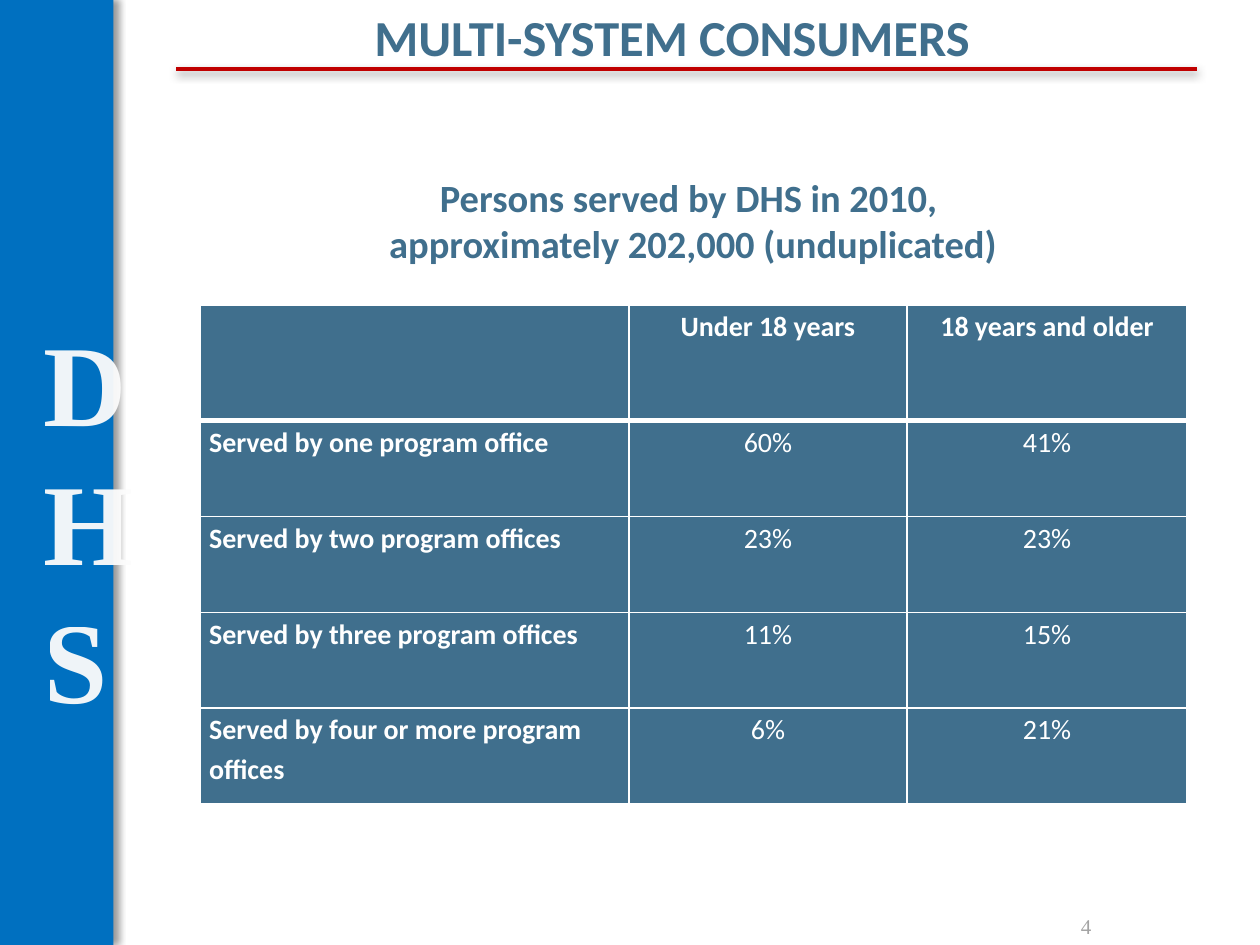
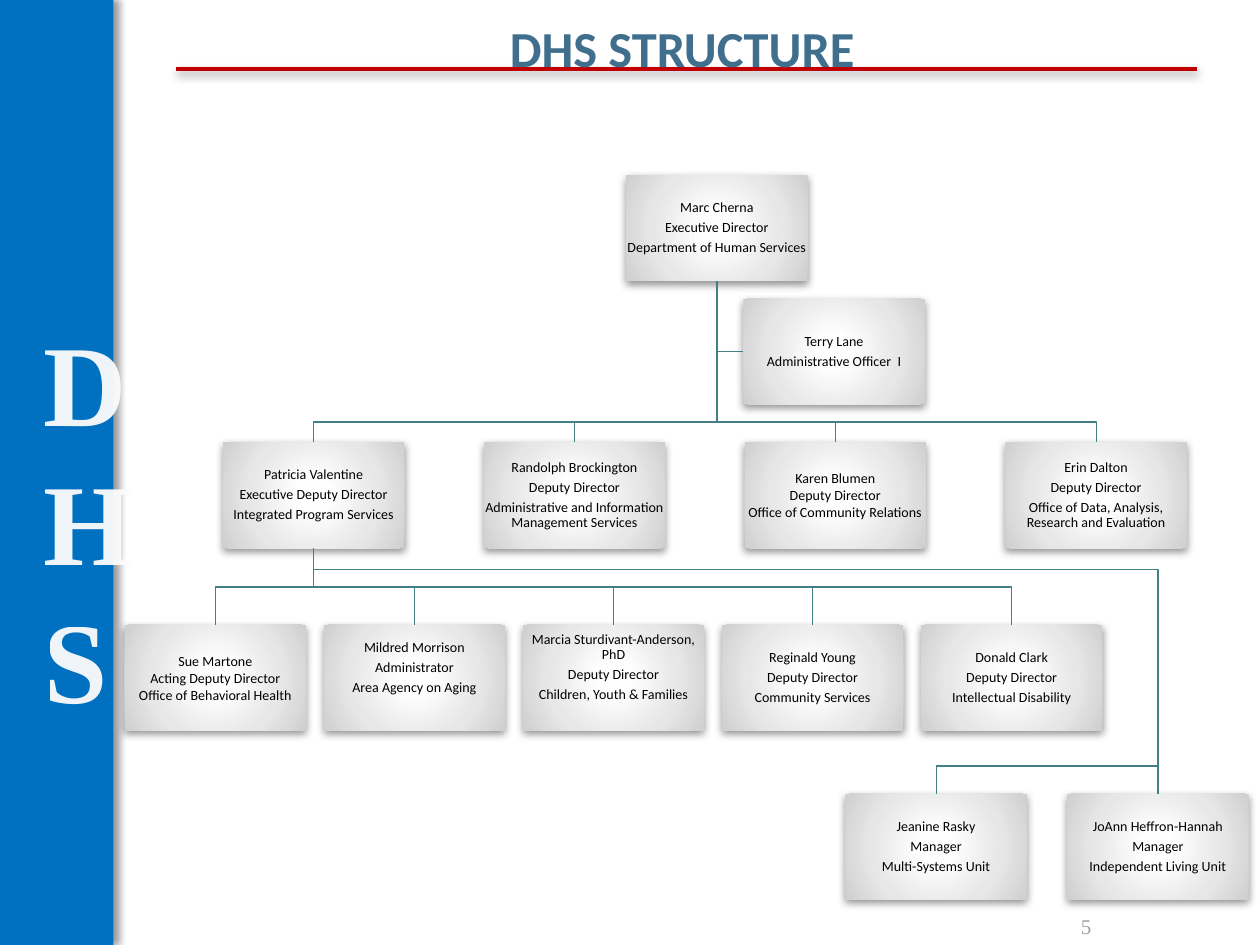
import pptx
import pptx.dml.color
import pptx.enum.shapes
import pptx.enum.text
import pptx.oxml
import pptx.oxml.ns
import pptx.util

Inches = pptx.util.Inches
Pt = pptx.util.Pt
RGBColor = pptx.dml.color.RGBColor
ALIGN = pptx.enum.text.PP_ALIGN
ANCHOR = pptx.enum.text.MSO_ANCHOR
CONNECTOR = pptx.enum.shapes.MSO_CONNECTOR
qn = pptx.oxml.ns.qn

# Colours
STEEL = RGBColor(0x40, 0x6F, 0x8D)
BAND_BLUE = RGBColor(0x00, 0x70, 0xC0)
RULE_RED = RGBColor(0xC0, 0x00, 0x00)
LINK_TEAL = RGBColor(0x43, 0x80, 0x86)
LETTER_WHITE = RGBColor(0xFC, 0xFC, 0xFC)
NUMBER_GREY = RGBColor(0xA3, 0xA3, 0xA3)
WHITE = RGBColor(0xFF, 0xFF, 0xFF)
BLACK = RGBColor(0x00, 0x00, 0x00)
CARD_STOPS = [(0, "FFFFFF"), (15, "FEFEFE"), (62, "E7E7E7"), (97, "D1D1D1"), (100, "CFCFCF")]

# Text formats
TITLE = {"name": "Calibri", "size": Pt(28.8), "bold": True}
SUBTITLE = {"name": "Calibri", "size": Pt(22), "bold": True}
LETTERS = {"name": "Times New Roman", "size": Pt(66), "bold": True}
NUMBER = {"name": "Times New Roman", "size": Pt(12)}
CELL = {"name": "Calibri", "size": Pt(16), "bold": False}
CELL_BOLD = {**CELL, "bold": True}
CARD = {"name": "Calibri", "size": Pt(8)}
CENTRED = {"alignment": ALIGN.CENTER}
SPACED = {**CENTRED, "line_spacing": 0.9, "space_after": Pt(2.8)}

# Shadows: opacity in percent, blur and distance in points, angle in degrees
DROP_SHADOW = (43, 5, 2, 90)
BAND_SHADOW = (40, 4, 3, 0)

# Organisation chart
CARD_WIDTH, CARD_HEIGHT = 1.44, 0.84
DEPUTIES = [
    ["Patricia Valentine", "Executive Deputy Director", "Integrated Program Services"],
    ["Randolph Brockington", "Deputy Director",
     "Administrative and Information Management Services"],
    ["Karen Blumen", "Deputy Director", "Office of Community Relations"],
    ["Erin Dalton", "Deputy Director", "Office of Data, Analysis, Research and Evaluation"],
]
OFFICES = [
    ["Sue Martone", "Acting Deputy Director", "Office of Behavioral Health"],
    ["Mildred Morrison", "Administrator", "Area Agency on Aging"],
    ["Marcia Sturdivant-Anderson, PhD", "Deputy Director", "Children, Youth & Families"],
    ["Reginald Young", "Deputy Director", "Community Services"],
    ["Donald Clark", "Deputy Director", "Intellectual Disability"],
]
UNITS = [
    ["Jeanine Rasky", "Manager", "Multi-Systems Unit"],
    ["JoAnn Heffron-Hannah", "Manager", "Independent Living Unit"],
]
TIGHT_CARDS = {"Karen Blumen", "Sue Martone"}
RAISED_CARDS = {"Mildred Morrison", "Marcia Sturdivant-Anderson, PhD"}

SERVED = [
    ["", "Under 18 years", "18 years and older"],
    ["Served by one program office", "60%", "41%"],
    ["Served by two program offices", "23%", "23%"],
    ["Served by three program offices", "11%", "15%"],
    ["Served by four or more program offices", "6%", "21%"],
]


def apply(target, values):
    for key, value in values.items():
        setattr(target, key, value)


def make_xml(tag, body, attributes=""):
    namespaces = pptx.oxml.ns.nsdecls("a")
    return pptx.oxml.parse_xml(f"<a:{tag} {namespaces} {attributes}>{body}</a:{tag}>")


def write_lines(frame, lines, font, color, layout=CENTRED):
    for index, line in enumerate(lines):
        para = frame.paragraphs[0] if index == 0 else frame.add_paragraph()
        apply(para, layout)
        span = para.add_run()
        span.text = line
        apply(span.font, font)
        span.font.color.rgb = color


def add_text(page, at, lines, font, color, anchor=ANCHOR.TOP):
    box = page.shapes.add_textbox(*map(Inches, at))
    apply(box.text_frame, {"word_wrap": True, "vertical_anchor": anchor})
    write_lines(box.text_frame, lines, font, color)
    return box


def set_shadow(shape, shadow=None):
    """Replace the theme shadow with the given one, or with none."""
    body = ""
    if shadow:
        opacity, blur, distance, angle = shadow
        body = (f'<a:outerShdw blurRad="{Pt(blur)}" dist="{Pt(distance)}" dir="{angle * 60000}" '
                f'rotWithShape="0"><a:srgbClr val="000000"><a:alpha val="{opacity * 1000}"/>'
                "</a:srgbClr></a:outerShdw>")
    shape._element.spPr.append(make_xml("effectLst", body))


def add_line(page, start, end, color=LINK_TEAL, width=0.75, shadow=None,
             kind=CONNECTOR.STRAIGHT):
    line = page.shapes.add_connector(kind, *map(Inches, (*start, *end)))
    line.line.color.rgb = color
    line.line.width = Pt(width)
    set_shadow(line, shadow)
    return line


def add_rectangle(page, at):
    shape = page.shapes.add_shape(
        pptx.enum.shapes.MSO_SHAPE.RECTANGLE, *map(Inches, at))
    shape.fill.background()
    shape.line.fill.background()
    return shape


# Parts shared by both slides
def add_page(deck, title, title_at, number):
    page = deck.slides.add_slide(deck.slide_layouts[6])
    add_line(page, (1.4, 0.55), (9.5, 0.55), RULE_RED, 2.25, DROP_SHADOW)

    band = add_rectangle(page, (0, 0, 0.9, 7.5))
    band.fill.solid()
    band.fill.fore_color.rgb = BAND_BLUE
    set_shadow(band, BAND_SHADOW)

    letters = add_text(page, (0.25, 2.42, 0.4, 3.43), ["DHS"], LETTERS, LETTER_WHITE)
    letter_color = letters._element.find(".//" + qn("a:srgbClr"))
    letter_color.append(make_xml("alpha", "", 'val="95000"'))

    add_text(page, (*title_at, 8.83, 0.57), [title], TITLE, STEEL, ANCHOR.MIDDLE)
    add_text(page, (7.58, 7.08, 2.08, 0.42), [number], NUMBER, NUMBER_GREY, ANCHOR.BOTTOM)
    return page


# Table
def set_borders(cell, bottom):
    properties = cell._tc.get_or_add_tcPr()
    sides = {"lnL": 1, "lnR": 1, "lnT": 1, "lnB": bottom}
    for position, (side, width) in enumerate(sides.items()):
        body = '<a:solidFill><a:srgbClr val="FFFFFF"/></a:solidFill>'
        properties.insert(position, make_xml(side, body, f'w="{Pt(width)}"'))


def add_served_table(page):
    widths = [3.4, 2.21, 2.22]
    heights = [0.92] + [0.76] * 4
    table = page.shapes.add_table(
        len(heights), len(widths), Inches(1.59), Inches(2.42),
        Inches(sum(widths)), Inches(sum(heights))).table
    for column, width in zip(table.columns, widths):
        column.width = Inches(width)
    for row, height in zip(table.rows, heights):
        row.height = Inches(height)

    margins = {"margin_left": Inches(0.07), "margin_right": Inches(0.07),
               "margin_top": 0, "margin_bottom": 0}
    for r, values in enumerate(SERVED):
        for c, value in enumerate(values):
            cell = table.cell(r, c)
            apply(cell, margins)
            cell.fill.solid()
            cell.fill.fore_color.rgb = STEEL
            set_borders(cell, bottom=3 if r == 0 else 1)
            if value:
                layout = {"alignment": ALIGN.CENTER if c else ALIGN.LEFT, "line_spacing": 1.15}
                font = CELL_BOLD if r == 0 or c == 0 else CELL
                write_lines(cell.text_frame, [value], font, WHITE, layout)


# Organisation chart
def add_card(page, left, top, lines):
    card = add_rectangle(page, (left, top, CARD_WIDTH, CARD_HEIGHT))
    stops = "".join(f'<a:gs pos="{place * 1000}"><a:srgbClr val="{color}"/></a:gs>'
                    for place, color in CARD_STOPS)
    gradient = make_xml("gradFill", f"<a:gsLst>{stops}</a:gsLst>"
                        '<a:path path="circle"><a:fillToRect l="50000" t="50000" '
                        'r="50000" b="50000"/></a:path>', 'rotWithShape="1"')
    properties = card._element.spPr
    properties.replace(properties.find(qn("a:noFill")), gradient)
    set_shadow(card, DROP_SHADOW)

    frame = card.text_frame
    sides = ("margin_left", "margin_right", "margin_top", "margin_bottom")
    apply(frame, dict.fromkeys(sides, Inches(0.01)))
    apply(frame, {"word_wrap": True, "vertical_anchor": ANCHOR.MIDDLE})
    if lines[0] in RAISED_CARDS:
        frame.margin_bottom = Inches(0.17)
    write_lines(frame, lines, CARD, BLACK, CENTRED if lines[0] in TIGHT_CARDS else SPACED)
    return card


def add_card_row(page, left, top, step, people):
    return [add_card(page, left + step * i, top, lines) for i, lines in enumerate(people)]


def middle(card):
    return (card.left + card.width / 2) / Inches(1)


def link_cards(page, parent, child, level):
    """Join parent and child with an elbow that runs across at the given level."""
    x1, y1 = middle(parent), (parent.top + parent.height) / Inches(1)
    x2, y2 = middle(child), child.top / Inches(1)
    link = add_line(page, (x1, y1), (x2, y2), kind=CONNECTOR.ELBOW)
    link.begin_connect(parent, 2)
    link.end_connect(child, 0)

    # The elbow preset starts sideways, so turn it to start downwards
    across, down = abs(x2 - x1), y2 - y1
    frame = link._element.spPr.find(qn("a:xfrm"))
    frame.attrib.clear()
    frame.set("rot", str((270 if x2 > x1 else 90) * 60000))
    if x2 > x1:
        frame.set("flipH", "1")
    apply(link, {"left": Inches((x1 + x2 - down) / 2), "top": Inches((y1 + y2 - across) / 2),
                 "width": Inches(down), "height": Inches(across)})
    bend = round((level - y1) / down * 100000)
    guides = link._element.find(".//" + qn("a:avLst"))
    guides.append(make_xml("gd", "", f'name="adj1" fmla="val {bend}"'))


def add_structure(page):
    director = add_card(page, 4.97, 1.39,
                        ["Marc Cherna", "Executive Director", "Department of Human Services"])
    officer = add_card(page, 5.9, 2.37, ["Terry Lane", "Administrative Officer  I"])
    deputies = add_card_row(page, 1.77, 3.51, 2.07, DEPUTIES)
    offices = add_card_row(page, 0.99, 4.96, 1.58, OFFICES)
    multi_systems, independent_living = add_card_row(page, 6.71, 6.3, 1.76, UNITS)

    for deputy in deputies:
        link_cards(page, director, deputy, 3.35)
    assistant = add_line(page, (middle(director), 2.79), (5.9, 2.79))
    assistant.end_connect(officer, 1)

    executive = deputies[0]
    for office in offices:
        link_cards(page, executive, office, 4.66)
    link_cards(page, executive, independent_living, 4.52)

    # Branch between the two units
    corner = (middle(multi_systems), 6.08)
    add_line(page, (middle(independent_living), 6.08), corner)
    drop = add_line(page, corner, (corner[0], 6.3))
    drop.end_connect(multi_systems, 0)


def main():
    deck = pptx.Presentation()
    deck.slide_width, deck.slide_height = Inches(10), Inches(7.5)

    # Consumers
    page = add_page(deck, "MULTI-SYSTEM CONSUMERS", (0.92, 0), "4")
    add_served_table(page)
    add_text(page, (1.75, 1.33, 7.5, 0.84),
             ["Persons served by DHS in 2010, ", "approximately 202,000 (unduplicated)"],
             SUBTITLE, STEEL)

    # Structure
    page = add_page(deck, "DHS STRUCTURE", (1, 0.09), "5")
    add_structure(page)
    deck.save("out.pptx")


if __name__ == "__main__":
    main()
